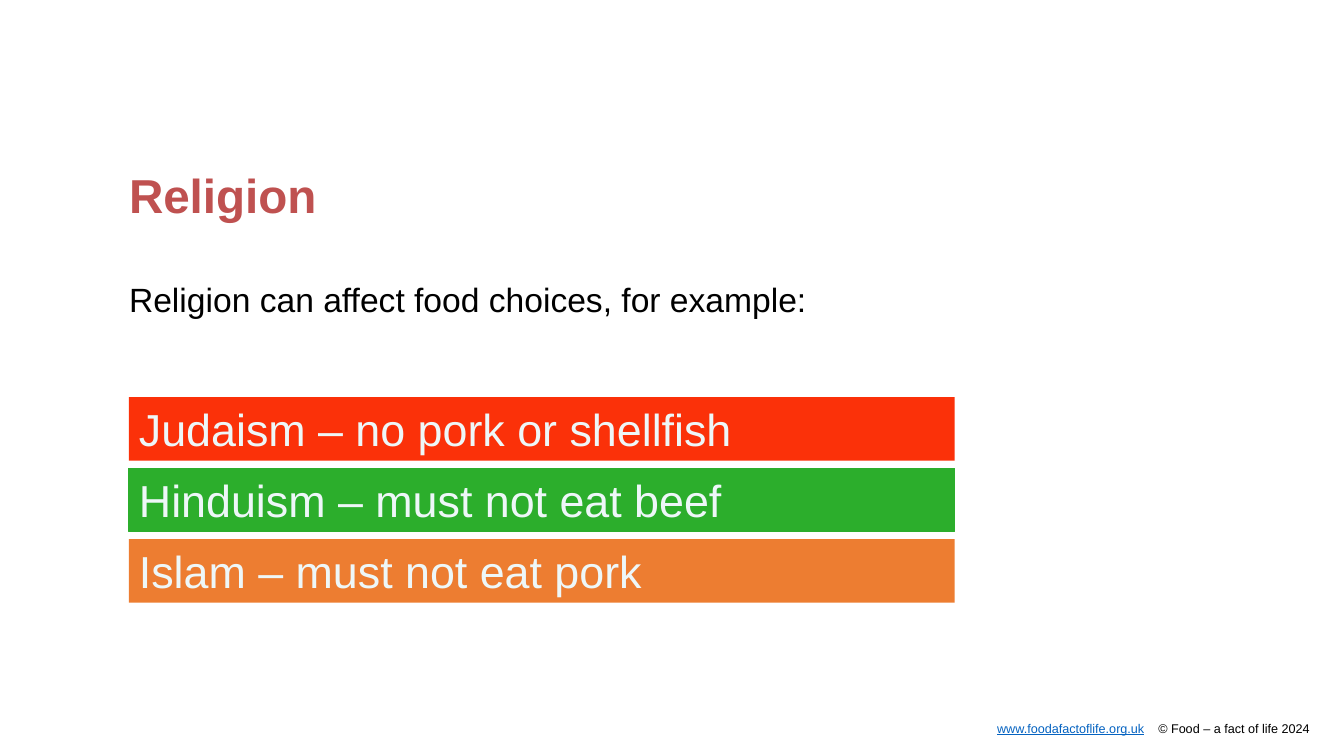
"""Build the slide on religion and food choices."""
from dataclasses import dataclass
from typing import Any, Optional

import pptx
import pptx.dml.color
import pptx.enum.shapes
import pptx.enum.text
import pptx.util

COLOURS = {
    "title": "BF5150",
    "body": "000000",
    "link": "0563C1",
    "bar_text": "EEF7F8",
    "judaism": "FB3109",
    "hinduism": "2CAE2C",
    "islam": "ED7D31",
}
SLIDE_W = pptx.util.Inches(13.33)
SLIDE_H = pptx.util.Inches(7.5)
LEFT, TEXT_W, BAR_W = 9.6, 79.74, 61.44
BAR_TOP, BAR_H, BAR_PITCH = 52.53, 8.4, 9.4
FOOTER_GAP = 750

ALIGN = pptx.enum.text.PP_ALIGN
NO_MARGINS = {f"margin_{side}": 0 for side in ("left", "top", "right", "bottom")}


@dataclass(frozen=True)
class Area:
    """A rectangle in percent of the slide's width and height."""
    left: float
    top: float
    width: float
    height: float

    def emu(self) -> tuple[int, ...]:
        """Return left, top, width and height in EMU."""
        shares = (self.left, self.top, self.width, self.height)
        return tuple(round(share * full / 100)
                     for share, full in zip(shares, (SLIDE_W, SLIDE_H) * 2))


@dataclass(frozen=True)
class Run:
    """A piece of text with its format."""
    text: str
    size: float
    colour: str
    bold: bool = False
    underline: bool = False
    spacing: int = 0


@dataclass(frozen=True)
class Label:
    """A plain text box with one paragraph."""
    area: Area
    runs: tuple[Run, ...]
    align: Any = ALIGN.LEFT
    line_spacing: Optional[float] = None


@dataclass(frozen=True)
class Bar:
    """A coloured bar naming a religion's food rule."""
    text: str
    colour: str
    outlined: bool = False


LABELS = (
    Label(Area(9.45, 95.33, 88, 2), (
        Run("www.foodafactoflife.org.uk", 9, "link", underline=True),
        Run(" ", 9, "body", spacing=FOOTER_GAP),
        Run("© Food – a fact of life 2024", 9, "body"),
    ), ALIGN.RIGHT),
    Label(Area(LEFT, 22.8, TEXT_W, 10.53),
          (Run("Religion", 34, "title", bold=True),), line_spacing=0.9),
    Label(Area(LEFT, 37.47, TEXT_W, 52.53),
          (Run("Religion can affect food choices, for example:", 24, "body"),),
          line_spacing=0.9),
)
BARS = (
    Bar("Judaism – no pork or shellfish", "judaism"),
    Bar("Hinduism – must not eat beef", "hinduism", outlined=True),
    Bar("Islam – must not eat pork", "islam"),
)


def rgb(name: str) -> pptx.dml.color.RGBColor:
    """Look up a named colour."""
    return pptx.dml.color.RGBColor.from_string(COLOURS[name])


def apply(target: Any, values: dict[str, Any]) -> None:
    """Set each named attribute on the target."""
    for name, value in values.items():
        setattr(target, name, value)


def write(tf: Any, runs: tuple[Run, ...], frame: dict[str, Any],
          paragraph: dict[str, Any]) -> None:
    """Fill a text frame with one formatted paragraph."""
    apply(tf, {"word_wrap": True,
               "vertical_anchor": pptx.enum.text.MSO_ANCHOR.TOP, **frame})
    p = tf.paragraphs[0]
    apply(p, paragraph)
    for run in runs:
        r = p.add_run()
        r.text = run.text
        apply(r.font, {"name": "Arial", "size": pptx.util.Pt(run.size),
                       "bold": run.bold, "underline": run.underline})
        r.font.color.rgb = rgb(run.colour)
        if run.spacing:
            r.font._element.set("spc", str(run.spacing))


def draw_label(s: Any, label: Label) -> None:
    """Draw a text box without margins."""
    sp = s.shapes.add_textbox(*label.area.emu())
    write(sp.text_frame, label.runs, NO_MARGINS,
          {"alignment": label.align, "line_spacing": label.line_spacing})


def draw_bar(s: Any, bar: Bar, row: int) -> None:
    """Draw a bar in the given row of the stack."""
    area = Area(LEFT, BAR_TOP + row * BAR_PITCH, BAR_W, BAR_H)
    sp = s.shapes.add_shape(pptx.enum.shapes.MSO_SHAPE.RECTANGLE, *area.emu())
    sp.shadow.inherit = False
    sp.fill.solid()
    sp.fill.fore_color.rgb = rgb(bar.colour)
    if bar.outlined:
        sp.line.color.rgb = rgb(bar.colour)
        sp.line.width = pptx.util.Pt(0.75)
    else:
        sp.line.fill.background()
    write(sp.text_frame, (Run(bar.text, 32, "bar_text"),), {},
          {"alignment": ALIGN.LEFT})


def main() -> None:
    """Build and save the presentation."""
    prs = pptx.Presentation()
    apply(prs, {"slide_width": SLIDE_W, "slide_height": SLIDE_H})
    s = prs.slides.add_slide(prs.slide_layouts[6])
    for label in LABELS:
        draw_label(s, label)
    for row, bar in enumerate(BARS):
        draw_bar(s, bar, row)
    prs.save("out.pptx")


if __name__ == "__main__":
    main()
